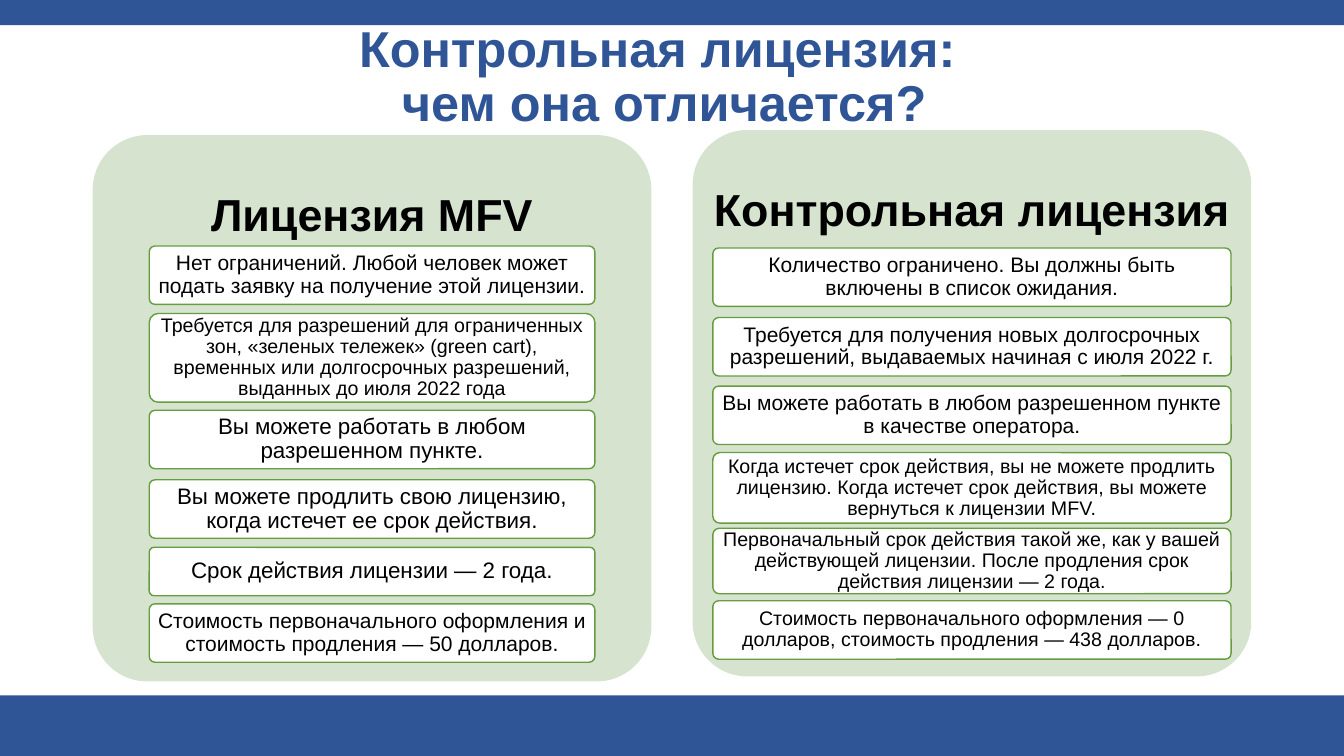
from pptx import Presentation
from pptx.dml.color import RGBColor
from pptx.enum import shapes, text
from pptx.util import Inches, Pt

BLUE, SAGE, GREEN, WHITE, BLACK = "2F5597", "D5E3CF", "669D40", "FFFFFF", "000000"
PANEL_WIDTH, PANEL_HEIGHT = 5.54, 5.42

MFV_ROWS = [
    (1.10, 0.58, 15, "Нет ограничений. Любой человек может подать заявку на получение этой лицензии."),
    (1.77, 0.88, 14, "Требуется для разрешений для ограниченных зон, «зеленых тележек» (green cart), "
                     "временных или долгосрочных разрешений, выданных до июля 2022 года"),
    (2.73, 0.58, 16, "Вы можете работать в любом разрешенном пункте."),
    (3.42, 0.58, 16, "Вы можете продлить свою лицензию, когда истечет ее срок действия."),
    (4.09, 0.48, 16, "Срок действия лицензии — 2 года."),
    (4.65, 0.58, 15, "Стоимость первоначального оформления и стоимость продления — 50 долларов."),
]
CONTROL_ROWS = [
    (1.17, 0.58, 15, "Количество ограничено. Вы должны быть включены в список ожидания."),
    (1.86, 0.58, 15, "Требуется для получения новых долгосрочных разрешений, "
                     "выдаваемых начиная с июля 2022 г."),
    (2.54, 0.58, 15, "Вы можете работать в любом разрешенном пункте в качестве оператора."),
    (3.20, 0.70, 14, "Когда истечет срок действия, вы не можете продлить лицензию. "
                     "Когда истечет срок действия, вы можете вернуться к лицензии MFV."),
    (3.95, 0.65, 14, "Первоначальный срок действия такой же, как у вашей действующей лицензии. "
                     "После продления срок действия лицензии — 2 года."),
    (4.67, 0.58, 14, "Стоимость первоначального оформления — 0 долларов, "
                     "стоимость продления — 438 долларов."),
]


def color(value):
    """Return the colour for a hex string."""
    return RGBColor.from_string(value)


def write(box, words, size, shade, bold=False, insets=(0.04, 0.03, 0.04, 0.03), wrap=True):
    """Put one centred paragraph in the middle of a box."""
    frame = box.text_frame
    frame.word_wrap = wrap
    frame.vertical_anchor = text.MSO_ANCHOR.MIDDLE
    (frame.margin_left, frame.margin_top,
     frame.margin_right, frame.margin_bottom) = map(Inches, insets)
    para = frame.paragraphs[0]
    para.text = words
    para.alignment = text.PP_ALIGN.CENTER
    para.line_spacing = 0.9
    for span in para.runs:
        span.font.name = "Arial"
        span.font.size = Pt(size)
        span.font.bold = bold
        span.font.color.rgb = color(shade)


def add_block(page, kind, left, top, width, height, fill, outline=None):
    """Add a flat preset shape with an optional thin outline."""
    block = page.shapes.add_shape(kind, *map(Inches, (left, top, width, height)))
    block.shadow.inherit = False
    block.fill.solid()
    block.fill.fore_color.rgb = color(fill)
    if outline:
        block.line.color.rgb = color(outline)
        block.line.width = Pt(1)
    else:
        block.line.fill.background()
    return block


def add_frame(page):
    """Draw the bands at the top and bottom of the page."""
    for top, height in ((0, 0.25), (6.9, 0.6)):
        add_block(page, shapes.MSO_SHAPE.RECTANGLE, 0, top, 13.33, height, BLUE)


def add_title(page, left, top, width, height):
    """Write the two-line page title."""
    box = page.shapes.add_textbox(*map(Inches, (left, top, width, height)))
    write(box, "Контрольная лицензия: \vчем она отличается?", 36, BLUE, bold=True)


def add_panel(page, left, top, heading, margin, rows):
    """Draw a licence panel with its heading and its rows."""
    rounded = shapes.MSO_SHAPE.ROUNDED_RECTANGLE
    panel = add_block(page, rounded, left, top, PANEL_WIDTH, PANEL_HEIGHT, SAGE)
    panel.adjustments[0] = 0.1
    write(panel, heading, 32, BLACK, bold=True, insets=(0, 0, 0, 3.8), wrap=False)
    for offset, height, size, words in rows:
        row = add_block(page, rounded, left + margin, top + offset,
                        PANEL_WIDTH - 2 * margin, height, WHITE, GREEN)
        row.adjustments[0] = 0.1
        write(row, words, size, BLACK)


def main():
    """Build the slide and save it."""
    deck = Presentation()
    deck.slide_width, deck.slide_height = Inches(13.33), Inches(7.5)
    page = deck.slides.add_slide(deck.slide_layouts[6])
    add_frame(page)
    add_title(page, 0.76, 0.2, 11.66, 1.15)
    add_panel(page, 0.92, 1.34, "Лицензия MFV", 0.56, MFV_ROWS)
    add_panel(page, 6.87, 1.29, "Контрольная лицензия", 0.2, CONTROL_ROWS)
    deck.save("out.pptx")


if __name__ == "__main__":
    main()
